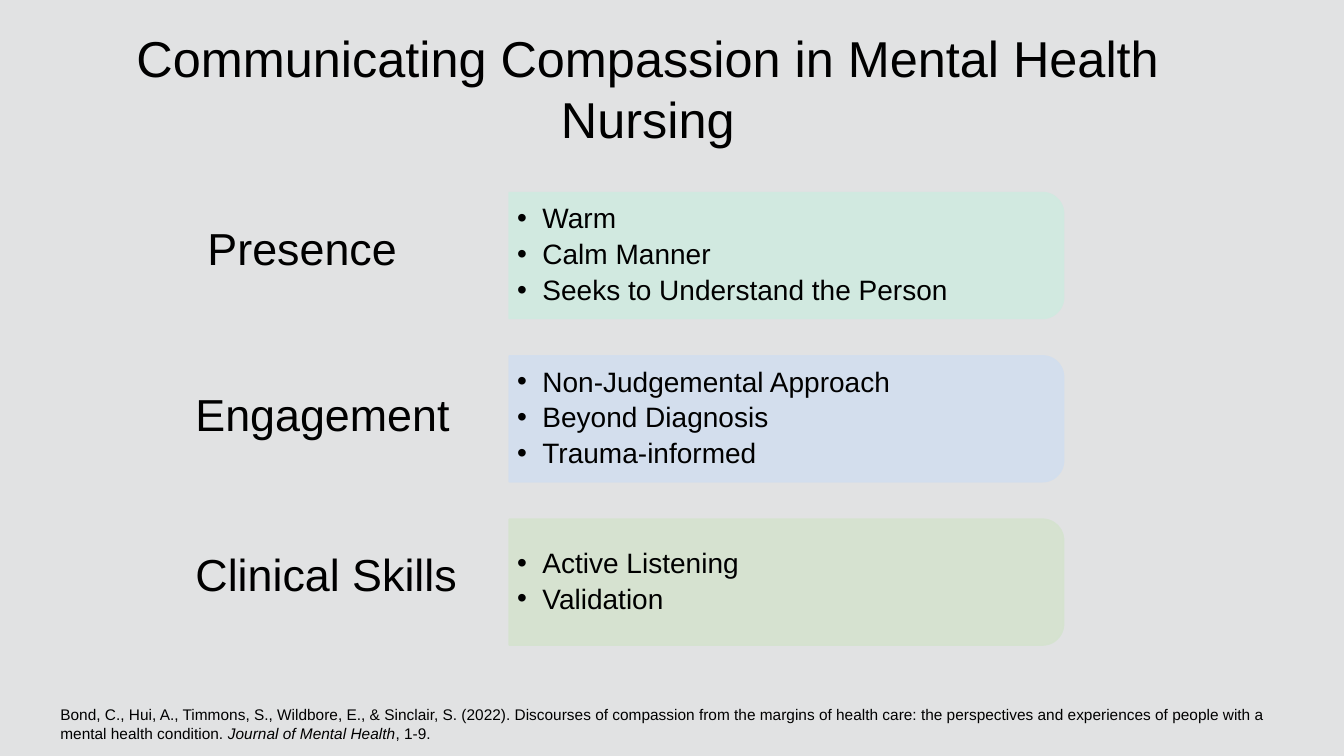
from math import cos, pi, sin

from lxml.etree import SubElement
from pptx import Presentation
from pptx.dml.color import RGBColor
from pptx.enum.text import MSO_ANCHOR, MSO_AUTO_SIZE, PP_ALIGN
from pptx.oxml.ns import qn
from pptx.util import Inches, Pt

TITLE = "Communicating Compassion in Mental Health Nursing"
BLACK = RGBColor(0, 0, 0)
BACKGROUND = RGBColor(0xE1, 0xE2, 0xE3)
MINT = RGBColor(0xD0, 0xEA, 0xE0)
BLUE = RGBColor(0xD2, 0xDE, 0xEF)
GREEN = RGBColor(0xD5, 0xE3, 0xCF)
THEMES = [
    ("Presence", 1.96, 2.14, MINT,
     ["Warm", "Calm Manner", "Seeks to Understand the Person"]),
    ("Engagement", 1.84, 3.79, BLUE,
     ["Non-Judgemental Approach", "Beyond Diagnosis", "Trauma-informed"]),
    ("Clinical Skills", 1.84, 5.37, GREEN,
     ["Active Listening", "Validation"]),
]
CITATION = [
    ("Bond, C., Hui, A., Timmons, S., Wildbore, E., & Sinclair, S. (2022). "
     "Discourses of compassion from the margins of health care: the perspectives "
     "and experiences of people with a mental health condition. ", False),
    ("Journal of Mental Health", True),
    (", 1-9.", False),
]
PANEL_LEFT, PANEL_TOP, PANEL_WIDTH, PANEL_HEIGHT = 5.05, 1.91, 5.5, 1.25
PANEL_STEP = 1.62
CORNER = 0.21
ARC_STEPS = 16


def add_run(paragraph, text, size, italic=False):
    run = paragraph.add_run()
    run.text = text
    run.font.name = "Arial"
    run.font.size = Pt(size)
    run.font.italic = italic
    run.font.color.rgb = BLACK


def add_text(slide, left, top, width, height, runs, size):
    box = slide.shapes.add_textbox(
        Inches(left), Inches(top), Inches(width), Inches(height))
    box.text_frame.word_wrap = True
    for text, italic in runs:
        add_run(box.text_frame.paragraphs[0], text, size, italic)


def add_bullet(paragraph):
    properties = paragraph._p.get_or_add_pPr()
    properties.set("marL", str(Inches(0.25)))
    properties.set("indent", str(-Inches(0.25)))
    SubElement(properties, qn("a:buFont")).set("typeface", "Arial")
    SubElement(properties, qn("a:buChar")).set("char", "•")


def add_panel(slide, top, color, items):
    right, bottom = PANEL_LEFT + PANEL_WIDTH, top + PANEL_HEIGHT
    angles = [pi / 2 * step / ARC_STEPS for step in range(ARC_STEPS + 1)]
    center = right - CORNER
    upper = [(center + CORNER * sin(angle), top + CORNER - CORNER * cos(angle))
             for angle in angles]
    lower = [(x, top + bottom - y) for x, y in reversed(upper)]
    outline = [(Inches(x), Inches(y))
               for x, y in upper + lower + [(PANEL_LEFT, bottom)]]
    builder = slide.shapes.build_freeform(Inches(PANEL_LEFT), Inches(top))
    builder.add_line_segments(outline, close=True)
    panel = builder.convert_to_shape()
    panel.shadow.inherit = False
    panel.fill.solid()
    panel.fill.fore_color.rgb = color
    panel.line.color.rgb = color
    panel.line.width = Pt(1)
    for color_element in panel._element.spPr.iter(qn("a:srgbClr")):
        SubElement(color_element, qn("a:alpha")).set("val", "90000")

    frame = panel.text_frame
    frame.word_wrap = True
    frame.vertical_anchor = MSO_ANCHOR.MIDDLE
    frame.margin_left, frame.margin_right = Inches(0.08), Inches(0.14)
    frame.margin_top = frame.margin_bottom = Inches(0.1)
    for index, item in enumerate(items):
        paragraph = frame.add_paragraph() if index else frame.paragraphs[0]
        paragraph.alignment = PP_ALIGN.LEFT
        paragraph.line_spacing = 0.9
        paragraph.space_after = Pt(4)
        add_bullet(paragraph)
        add_run(paragraph, item, 20)


def main():
    presentation = Presentation()
    presentation.slide_width = Inches(13.33)
    presentation.slide_height = Inches(7.5)
    slide = presentation.slides.add_slide(presentation.slide_layouts[5])
    slide.background.fill.solid()
    slide.background.fill.fore_color.rgb = BACKGROUND

    title = slide.shapes.title
    title.left, title.top = Inches(0.64), Inches(0.22)
    title.width, title.height = Inches(11.57), Inches(1.13)
    title.text_frame.auto_size = MSO_AUTO_SIZE.NONE
    title.text_frame.vertical_anchor = MSO_ANCHOR.TOP
    title.text_frame.paragraphs[0].alignment = PP_ALIGN.CENTER
    add_run(title.text_frame.paragraphs[0], TITLE, 36)

    for index, (label, left, top, color, items) in enumerate(THEMES):
        add_panel(slide, PANEL_TOP + index * PANEL_STEP, color, items)
        add_text(slide, left, top, 3.56, 0.64, [(label, False)], 32)
    add_text(slide, 0.5, 6.95, 12.21, 0.47, CITATION, 11)

    presentation.save("out.pptx")


if __name__ == "__main__":
    main()
